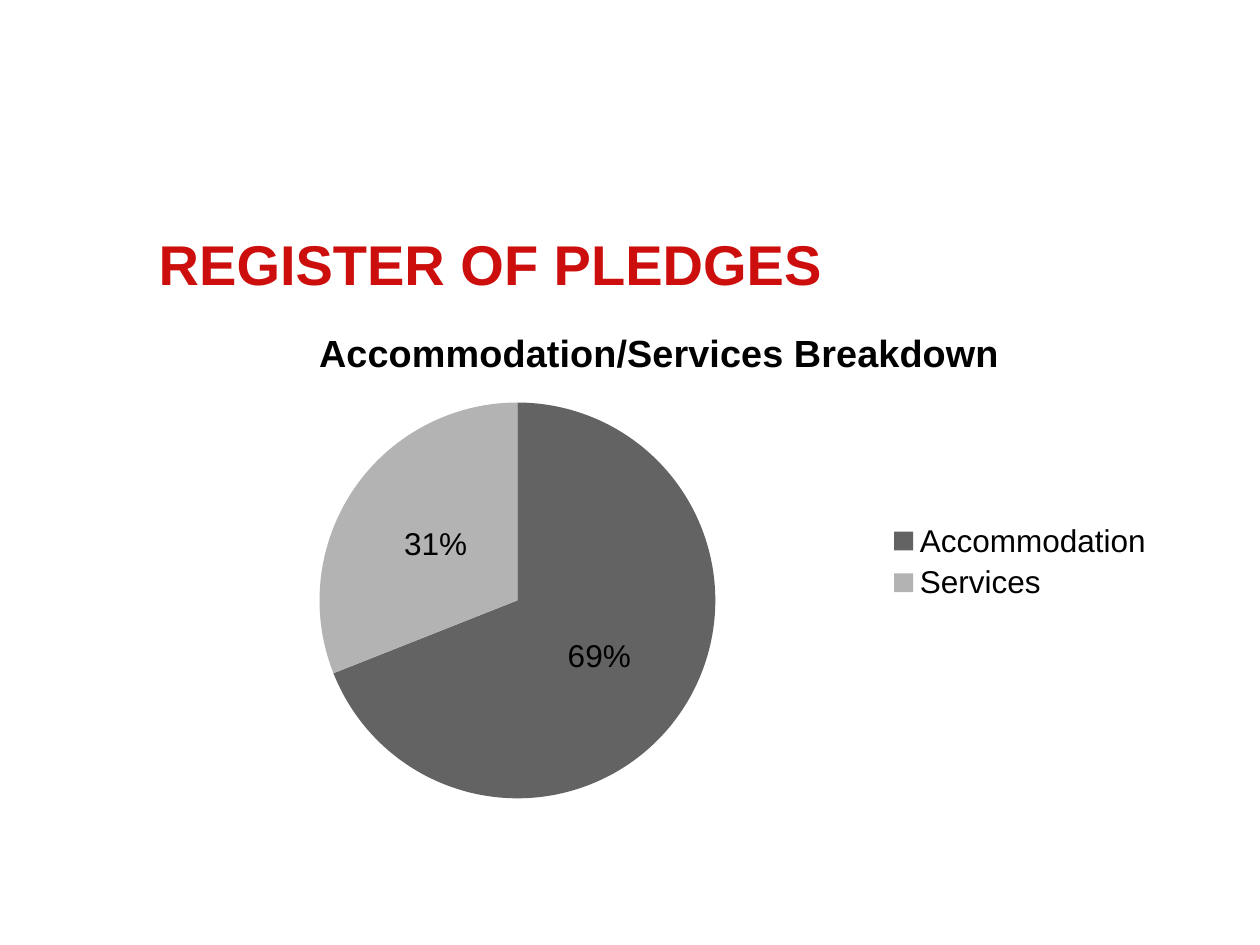
from dataclasses import dataclass

from lxml import etree
from pptx import Presentation
from pptx.chart.chart import Chart
from pptx.chart.data import CategoryChartData
from pptx.dml.color import RGBColor
from pptx.enum.chart import XL_CHART_TYPE, XL_LABEL_POSITION, XL_LEGEND_POSITION
from pptx.enum.text import MSO_ANCHOR, PP_ALIGN
from pptx.oxml.ns import qn
from pptx.slide import Slide
from pptx.util import Inches, Pt

PIE = XL_CHART_TYPE.PIE
LABEL_CENTER = XL_LABEL_POSITION.CENTER
LEGEND_RIGHT = XL_LEGEND_POSITION.RIGHT
MIDDLE = MSO_ANCHOR.MIDDLE
LEFT = PP_ALIGN.LEFT

FONT = "Arial"
COLORS = {
    "heading": "CC0F0D",
    "text": "000000",
    "accommodation": "636363",
    "services": "B3B3B3",
}
TITLE_ONLY = 5


@dataclass(frozen=True)
class Slice:
    label: str
    percent: int
    color: str


SLICES = [
    Slice("Accommodation", 69, "accommodation"),
    Slice("Services", 31, "services"),
]


def style_font(font, size: float, color: str, bold: bool = False) -> None:
    font.name = FONT
    font.size = Pt(size)
    font.bold = bold
    font.color.rgb = RGBColor.from_string(COLORS[color])


def add_heading(slide: Slide, heading: str) -> None:
    title = slide.shapes.title
    title.left, title.top = Inches(1.16), Inches(1.75)
    title.width, title.height = Inches(8.09), Inches(0.67)
    frame = title.text_frame
    frame.text = heading
    frame.vertical_anchor = MIDDLE
    paragraph = frame.paragraphs[0]
    paragraph.alignment = LEFT
    style_font(paragraph.runs[0].font, 32, "heading", bold=True)


def place_plot(chart: Chart, x: float, y: float, w: float, h: float) -> None:
    """Fix the inner plot area, in fractions of the chart's size."""
    plot_area = chart.element.chart.plotArea
    for old_layout in plot_area.findall(qn("c:layout")):
        plot_area.remove(old_layout)
    layout = etree.Element(qn("c:layout"))
    manual = etree.SubElement(layout, qn("c:manualLayout"))
    settings = {"layoutTarget": "inner", "xMode": "edge", "yMode": "edge",
                "x": x, "y": y, "w": w, "h": h}
    for tag, value in settings.items():
        etree.SubElement(manual, qn(f"c:{tag}")).set("val", str(value))
    plot_area.insert(0, layout)


def add_breakdown_pie(slide: Slide, caption: str, slices: list[Slice]) -> None:
    breakdown = CategoryChartData(number_format="0")
    breakdown.categories = [part.label for part in slices]
    breakdown.add_series("Series 1", [part.percent for part in slices])
    chart = slide.shapes.add_chart(
        PIE, Inches(1.21), Inches(2.42), Inches(8.05), Inches(4.08), breakdown
    ).chart
    style_font(chart.font, 18, "text")

    chart.has_title = True
    chart.chart_title.include_in_layout = False
    caption_frame = chart.chart_title.text_frame
    caption_frame.text = caption
    style_font(caption_frame.paragraphs[0].runs[0].font, 21.6, "text", bold=True)

    chart.has_legend = True
    chart.legend.position = LEGEND_RIGHT
    chart.legend.include_in_layout = False

    plot = chart.plots[0]
    plot.vary_by_categories = True
    plot.has_data_labels = True
    labels = plot.data_labels
    labels.show_percentage = True
    labels.show_value = False
    labels.number_format = "0%"
    labels.number_format_is_linked = False
    labels.position = LABEL_CENTER
    style_font(labels.font, 18, "text")

    for index, part in enumerate(slices):
        fill = plot.series[0].points[index].format.fill
        fill.solid()
        fill.fore_color.rgb = RGBColor.from_string(COLORS[part.color])
    place_plot(chart, 0.16, 0.19, 0.4, 0.77)


def main() -> None:
    presentation = Presentation()
    presentation.slide_width, presentation.slide_height = Inches(10), Inches(7.5)
    slide = presentation.slides.add_slide(presentation.slide_layouts[TITLE_ONLY])
    add_heading(slide, "REGISTER OF PLEDGES")
    add_breakdown_pie(slide, "Accommodation/Services Breakdown", SLICES)
    presentation.save("out.pptx")


if __name__ == "__main__":
    main()
